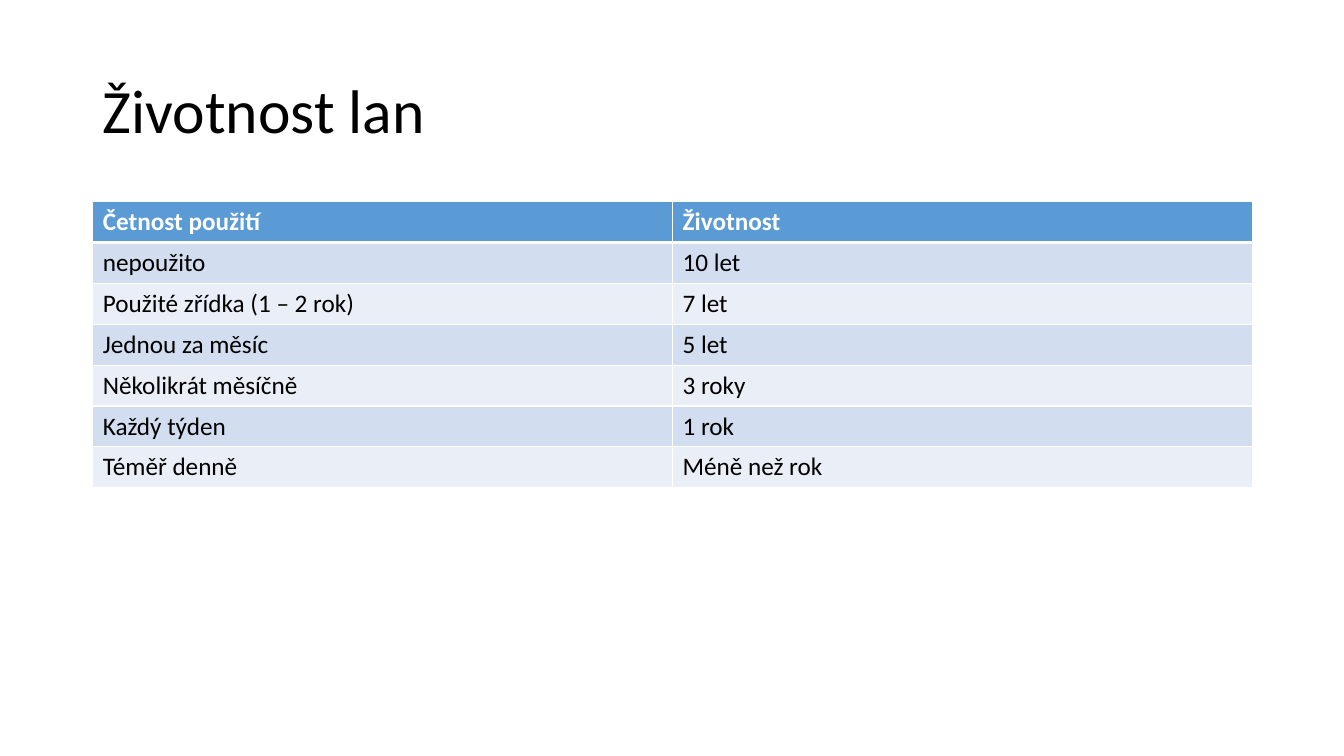
from dataclasses import dataclass

from lxml.etree import SubElement
from pptx import Presentation
from pptx.dml.color import RGBColor
from pptx.enum.text import MSO_ANCHOR
from pptx.oxml.ns import qn
from pptx.util import Inches, Pt


@dataclass(frozen=True)
class Theme:
    font: str = "Calibri"
    title_size: int = 44
    body_size: int = 18
    text: str = "000000"
    light: str = "FFFFFF"
    header: str = "5B9BD5"
    bands: tuple = ("D2DEEF", "EAEFF7")
    thin_border: int = 1
    header_border: int = 3


LIFETIMES = [
    ("Četnost použití", "Životnost"),
    ("nepoužito", "10 let"),
    ("Použité zřídka (1 – 2 rok)", "7 let"),
    ("Jednou za měsíc", "5 let"),
    ("Několikrát měsíčně", "3 roky"),
    ("Každý týden", "1 rok"),
    ("Téměř denně", "Méně než rok"),
]


class SlideBuilder:
    def __init__(self, presentation, theme):
        self.theme = theme
        self.width = presentation.slide_width
        self.height = presentation.slide_height
        self.slide = presentation.slides.add_slide(presentation.slide_layouts[6])

    def place(self, left, top, width, height):
        """Turn shares of the slide's size into lengths."""
        return (int(left * self.width), int(top * self.height),
                int(width * self.width), int(height * self.height))

    def add_text(self, paragraph, text, size, color, bold=False):
        run = paragraph.add_run()
        run.text = text
        font_format = {"name": self.theme.font, "size": Pt(size), "bold": bold}
        for name, value in font_format.items():
            setattr(run.font, name, value)
        run.font.color.rgb = RGBColor.from_string(color)

    def title(self, text, left, top, width, height):
        box = self.slide.shapes.add_textbox(*self.place(left, top, width, height))
        frame = box.text_frame
        frame_format = {"word_wrap": True, "vertical_anchor": MSO_ANCHOR.MIDDLE}
        for name, value in frame_format.items():
            setattr(frame, name, value)
        paragraph = frame.paragraphs[0]
        paragraph.line_spacing = 0.9
        self.add_text(paragraph, text, self.theme.title_size, self.theme.text)

    def borders(self, cell, widths):
        """Draw the cell's edges; widths maps L, R, T and B, in that order, to points."""
        properties = cell._tc.get_or_add_tcPr()
        for side, width in widths.items():
            line = SubElement(properties, qn(f"a:ln{side}"), w=str(Pt(width)))
            fill = SubElement(line, qn("a:solidFill"))
            SubElement(fill, qn("a:srgbClr"), val=self.theme.light)

    def table(self, rows, left, top, width, height):
        theme = self.theme
        frame = self.slide.shapes.add_table(
            len(rows), len(rows[0]), *self.place(left, top, width, height))
        for row_index, row in enumerate(rows):
            is_header = row_index == 0
            fill = theme.header if is_header else theme.bands[(row_index - 1) % 2]
            color = theme.light if is_header else theme.text
            widths = dict.fromkeys("LRTB", theme.thin_border)
            if row_index < 2:
                widths["B" if is_header else "T"] = theme.header_border
            for column_index, text in enumerate(row):
                cell = frame.table.cell(row_index, column_index)
                self.borders(cell, widths)
                cell.fill.solid()
                cell.fill.fore_color.rgb = RGBColor.from_string(fill)
                self.add_text(cell.text_frame.paragraphs[0], text,
                              theme.body_size, color, is_header)


def main():
    presentation = Presentation()
    presentation.slide_width = Inches(13.33)
    presentation.slide_height = Inches(7.5)

    margin = 0.92 / 13.33
    content_width = 11.5 / 13.33
    builder = SlideBuilder(presentation, Theme())
    builder.title("Životnost lan", margin, 0.4 / 7.5, content_width, 1.45 / 7.5)
    builder.table(LIFETIMES, margin, 2 / 7.5, content_width, 2.84 / 7.5)
    presentation.save("out.pptx")


if __name__ == "__main__":
    main()
